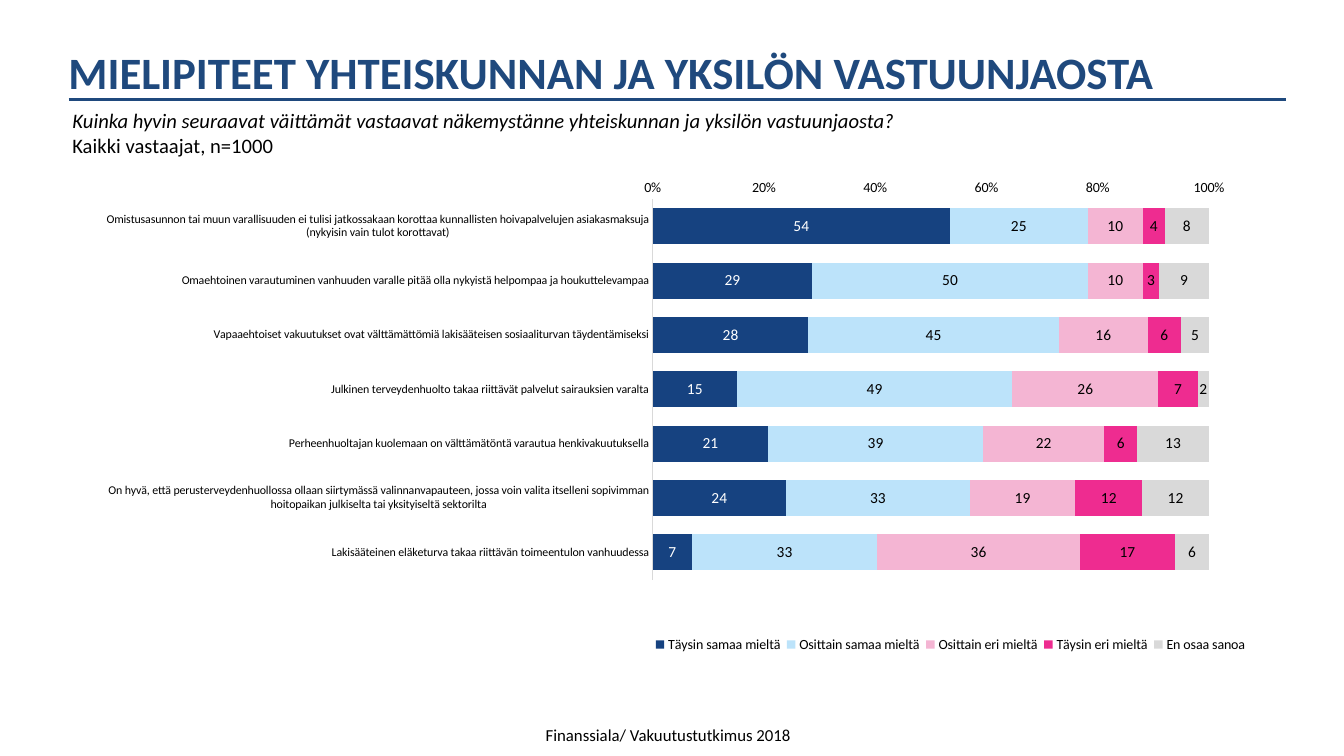
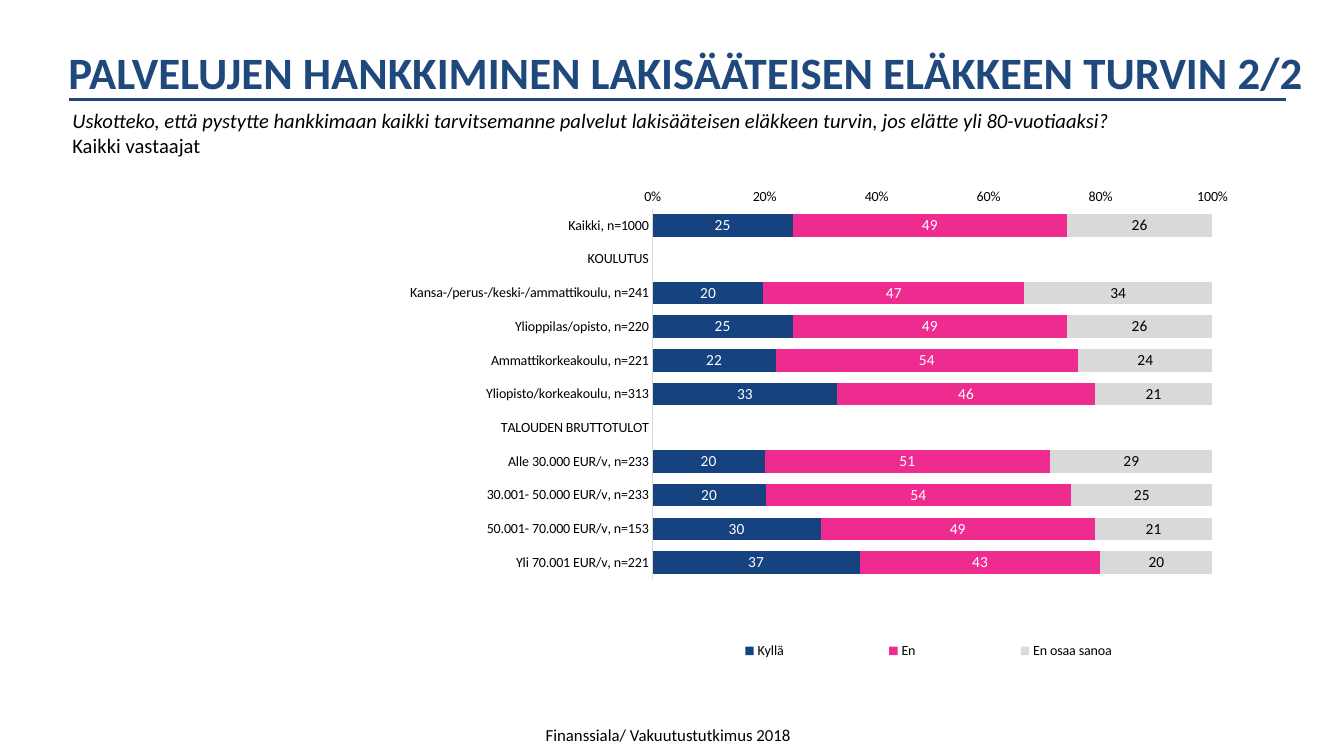
import dataclasses

import lxml.etree
import pptx
import pptx.chart.data
import pptx.dml.color
import pptx.enum.chart
import pptx.enum.shapes
import pptx.enum.text
import pptx.oxml
import pptx.oxml.ns
import pptx.util

Cm = pptx.util.Cm
Pt = pptx.util.Pt
qn = pptx.oxml.ns.qn


@dataclasses.dataclass(frozen=True)
class Theme:
    font: str = "Calibri"
    heading: str = "1F497D"
    text: str = "000000"
    light_text: str = "FFFFFF"
    navy: str = "164280"
    sky: str = "BCE3FA"
    rose: str = "F4B5D3"
    magenta: str = "EE2C90"
    grey: str = "D9D9D9"
    title_size: float = 32
    question_size: float = 14.7
    source_size: float = 12
    value_size: float = 11
    chart_size: float = 10
    statement_size: float = 8.5


THEME = Theme()

RESPONSIBILITY = {
    "title": "MIELIPITEET YHTEISKUNNAN JA YKSILÖN VASTUUNJAOSTA",
    "question": "Kuinka hyvin seuraavat väittämät vastaavat näkemystänne yhteiskunnan ja yksilön vastuunjaosta?",
    "respondents": "Kaikki vastaajat, n=1000",
    "categories": [
        "Omistusasunnon tai muun varallisuuden ei tulisi jatkossakaan korottaa kunnallisten "
        "hoivapalvelujen asiakasmaksuja (nykyisin vain tulot korottavat)",
        "Omaehtoinen varautuminen vanhuuden varalle pitää olla nykyistä helpompaa ja houkuttelevampaa",
        "Vapaaehtoiset vakuutukset ovat välttämättömiä lakisääteisen sosiaaliturvan täydentämiseksi",
        "Julkinen terveydenhuolto takaa riittävät palvelut sairauksien varalta",
        "Perheenhuoltajan kuolemaan on välttämätöntä varautua henkivakuutuksella",
        "On hyvä, että perusterveydenhuollossa ollaan siirtymässä valinnanvapauteen, jossa voin valita "
        "itselleni sopivimman hoitopaikan julkiselta tai yksityiseltä sektorilta",
        "Lakisääteinen eläketurva takaa riittävän toimeentulon vanhuudessa",
    ],
    "answers": [
        ("Täysin samaa mieltä", THEME.navy, THEME.light_text, [54, 29, 28, 15, 21, 24, 7]),
        ("Osittain samaa mieltä", THEME.sky, THEME.text, [25, 50, 45, 49, 39, 33, 33]),
        ("Osittain eri mieltä", THEME.rose, THEME.text, [10, 10, 16, 26, 22, 19, 36]),
        ("Täysin eri mieltä", THEME.magenta, THEME.text, [4, 3, 6, 7, 6, 12, 17]),
        ("En osaa sanoa", THEME.grey, THEME.text, [8, 9, 5, 2, 13, 12, 6]),
    ],
    "category_size": THEME.statement_size,
    "plot_area": (0.483, 0.042, 0.48, 0.773),
    "legend_area": (0.48, 0.917, 0.52, 0.06),
}

PENSION = {
    "title": "PALVELUJEN HANKKIMINEN LAKISÄÄTEISEN ELÄKKEEN TURVIN 2/2",
    "question": "Uskotteko, että pystytte hankkimaan kaikki tarvitsemanne palvelut lakisääteisen "
                "eläkkeen turvin, jos elätte yli 80-vuotiaaksi?",
    "respondents": "Kaikki vastaajat",
    "categories": [
        "Kaikki, n=1000",
        "KOULUTUS",
        "Kansa-/perus-/keski-/ammattikoulu, n=241",
        "Ylioppilas/opisto, n=220",
        "Ammattikorkeakoulu, n=221",
        "Yliopisto/korkeakoulu, n=313",
        "TALOUDEN BRUTTOTULOT",
        "Alle 30.000 EUR/v, n=233",
        "30.001- 50.000 EUR/v, n=233",
        "50.001- 70.000 EUR/v, n=153",
        "Yli 70.001 EUR/v, n=221",
    ],
    "answers": [
        ("Kyllä", THEME.navy, THEME.light_text, [25, None, 20, 25, 22, 33, None, 20, 20, 30, 37]),
        ("En", THEME.magenta, THEME.light_text, [49, None, 47, 49, 54, 46, None, 51, 54, 49, 43]),
        ("En osaa sanoa", THEME.grey, THEME.text, [26, None, 34, 26, 24, 21, None, 29, 25, 21, 20]),
    ],
    "category_size": THEME.chart_size,
    "plot_area": (0.483, 0.061, 0.483, 0.754),
    "legend_area": (0.476, 0.93, 0.49, 0.06),
}


def rgb(color):
    return pptx.dml.color.RGBColor.from_string(color)


def apply_format(target, values):
    for name, value in values.items():
        setattr(target, name, value)


def style_font(font, size, color=THEME.text, **extras):
    apply_format(font, {"name": THEME.font, "size": Pt(size), "bold": False, **extras})
    font.color.rgb = rgb(color)


def place(shape, left, top, width, height):
    apply_format(shape, {"left": Cm(left), "top": Cm(top), "width": Cm(width), "height": Cm(height)})


def frame_text(frame, **extras):
    apply_format(frame, {
        "auto_size": pptx.enum.text.MSO_AUTO_SIZE.NONE,
        "vertical_anchor": pptx.enum.text.MSO_ANCHOR.TOP,
        "word_wrap": True,
        **extras,
    })


def add_title(slide, wording):
    title = slide.shapes.title
    place(title, 1.47, 0.99, 32, 1.63)
    frame_text(title.text_frame)
    title.text_frame.text = wording
    heading = title.text_frame.paragraphs[0]
    heading.alignment = pptx.enum.text.PP_ALIGN.LEFT
    style_font(heading.font, THEME.title_size, THEME.heading, bold=True)


def add_question(slide, question, respondents):
    body = slide.placeholders[1]
    place(body, 1.57, 2.59, 30.81, 1.5)
    frame_text(body.text_frame)
    body.text_frame.text = f"{question}\n{respondents}"
    for paragraph, italic in zip(body.text_frame.paragraphs, (True, False)):
        properties = paragraph._p.get_or_add_pPr()
        apply_format(paragraph, {"space_before": Pt(0), "space_after": Pt(0)})
        properties.set("marL", "0")
        properties.set("indent", "0")
        lxml.etree.SubElement(properties, qn("a:buNone"))
        style_font(paragraph.font, THEME.question_size, italic=italic)


def add_title_rule(slide):
    rule = slide.shapes.add_connector(
        pptx.enum.shapes.MSO_CONNECTOR.STRAIGHT, Cm(1.73), Cm(2.51), Cm(32.41), Cm(2.51))
    rule.line.color.rgb = rgb(THEME.heading)
    rule.line.width = Pt(2.25)
    lxml.etree.SubElement(rule._element.spPr, qn("a:effectLst"))


def add_source_note(slide):
    note = slide.shapes.add_textbox(Cm(13.34), Cm(18.06), Cm(7.06), Cm(0.91))
    frame_text(note.text_frame, word_wrap=False, margin_left=Cm(0.41), margin_right=Cm(0.41),
               margin_top=Cm(0.2), margin_bottom=Cm(0.2))
    note.text_frame.text = "Finanssiala/ Vakuutustutkimus 2018"
    style_font(note.text_frame.paragraphs[0].font, THEME.source_size)


def set_layout(parent, index, area, inner=False):
    for layout in parent.findall(qn("c:layout")):
        parent.remove(layout)
    layout = parent.makeelement(qn("c:layout"))
    manual = lxml.etree.SubElement(layout, qn("c:manualLayout"))
    settings = [("layoutTarget", "inner")] if inner else []
    settings += [("xMode", "edge"), ("yMode", "edge")]
    settings += zip("xywh", area)
    for tag, value in settings:
        lxml.etree.SubElement(manual, qn(f"c:{tag}")).set("val", str(value))
    parent.insert(index, layout)


def style_axes(chart, category_size):
    no_tick = pptx.enum.chart.XL_TICK_MARK.NONE
    plain = {"major_tick_mark": no_tick, "minor_tick_mark": no_tick, "has_major_gridlines": False}
    categories, shares = chart.category_axis, chart.value_axis
    apply_format(categories, {**plain, "reverse_order": True,
                              "crosses": pptx.enum.chart.XL_AXIS_CROSSES.MAXIMUM})
    apply_format(shares, {**plain, "major_unit": 0.2})
    apply_format(shares.tick_labels, {"number_format": "0%", "number_format_is_linked": False})
    style_font(categories.tick_labels.font, category_size)
    style_font(shares.tick_labels.font, THEME.chart_size)
    categories.format.line.color.rgb = rgb(THEME.grey)
    categories.format.line.width = Pt(0.75)
    shares.format.line.fill.background()


def style_answer(series, fill_color, label_color):
    series.format.fill.solid()
    series.format.fill.fore_color.rgb = rgb(fill_color)
    apply_format(series.data_labels, {"show_value": True, "number_format": "0",
                                      "number_format_is_linked": False})
    style_font(series.data_labels.font, THEME.value_size, label_color)


def add_answer_chart(slide, survey):
    answers = pptx.chart.data.CategoryChartData(number_format="0")
    answers.categories = survey["categories"]
    for name, _, _, values in survey["answers"]:
        answers.add_series(name, values)
    chart = slide.shapes.add_chart(
        pptx.enum.chart.XL_CHART_TYPE.BAR_STACKED_100,
        Cm(2.34), Cm(4.5), Cm(29.21), Cm(12.4), answers).chart
    apply_format(chart, {"has_title": False, "has_legend": True})
    style_font(chart.font, THEME.chart_size)
    plot = chart.plots[0]
    apply_format(plot, {"gap_width": 50, "overlap": 100, "vary_by_categories": False})
    for series, (_, fill_color, label_color, _) in zip(plot.series, survey["answers"]):
        style_answer(series, fill_color, label_color)
    style_axes(chart, survey["category_size"])
    apply_format(chart.legend, {"position": pptx.enum.chart.XL_LEGEND_POSITION.BOTTOM,
                                "include_in_layout": False})
    style_font(chart.legend.font, THEME.chart_size)
    set_layout(chart._chartSpace.chart.plotArea, 0, survey["plot_area"], inner=True)
    set_layout(chart.legend._element, 1, survey["legend_area"])


def add_survey_slide(presentation, survey):
    slide = presentation.slides.add_slide(presentation.slide_layouts[1])
    add_answer_chart(slide, survey)
    add_title_rule(slide)
    add_title(slide, survey["title"])
    add_question(slide, survey["question"], survey["respondents"])
    add_source_note(slide)


def main():
    presentation = pptx.Presentation()
    apply_format(presentation, {"slide_width": Cm(33.87), "slide_height": Cm(19.05)})
    for survey in (RESPONSIBILITY, PENSION):
        add_survey_slide(presentation, survey)
    presentation.save("out.pptx")


if __name__ == "__main__":
    main()
